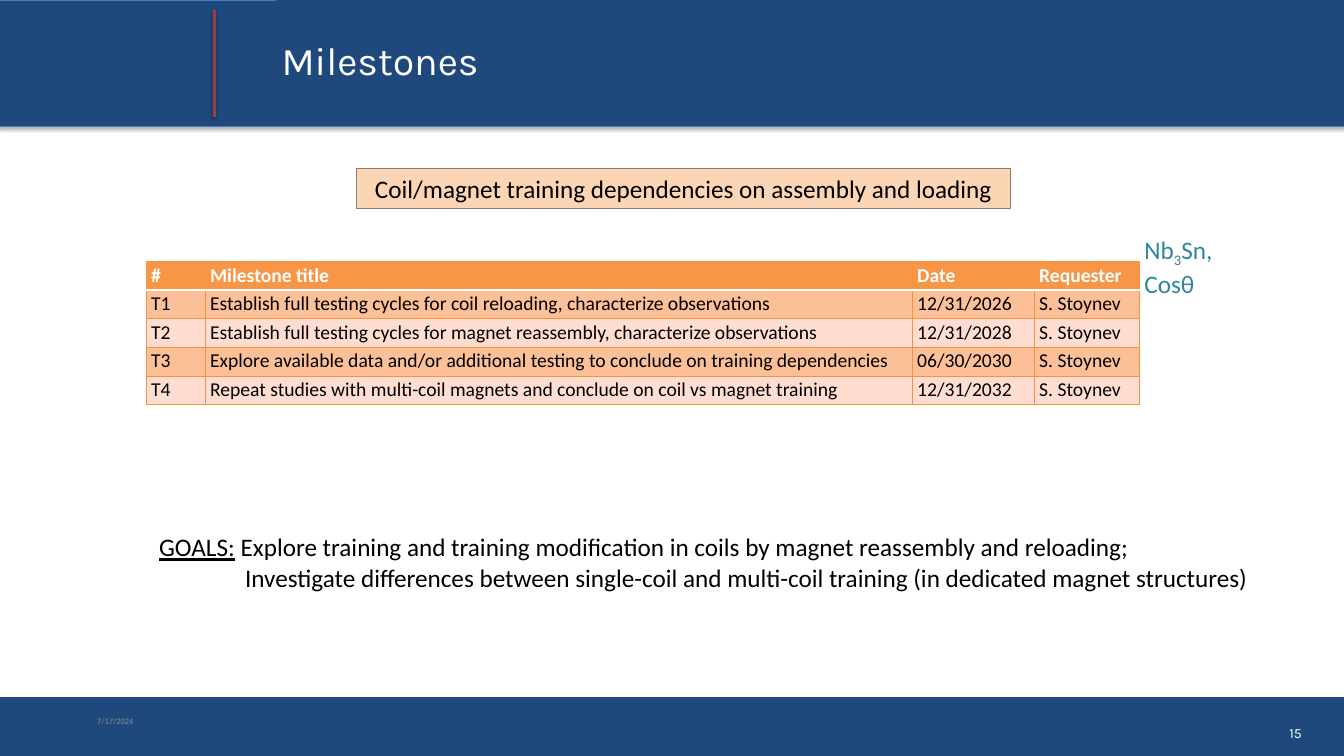
from dataclasses import dataclass

from lxml import etree
from pptx import Presentation
from pptx import util as u
from pptx.dml.color import RGBColor
from pptx.enum import shapes, text
from pptx.oxml import parse_xml
from pptx.oxml.ns import nsdecls, qn


@dataclass(frozen=True)
class Theme:
    navy: str = "1F497D"
    header_edge: str = "4A7EBB"
    divider: str = "9A403E"
    white: str = "FFFFFF"
    black: str = "000000"
    date_gray: str = "8C8C8C"
    topic_fill: str = "FCD5B5"
    topic_edge: str = "808080"
    teal: str = "31859C"
    table_head: str = "F79646"
    table_grid: str = "F69240"
    band_dark: str = "FCC099"
    band_light: str = "FFDDD0"
    heading_font: str = "Karla"
    body_font: str = "Calibri"
    title_size: int = 56
    body_size: int = 36
    table_size: int = 28
    number_size: int = 20
    date_size: int = 12


theme = Theme()


def add_block(box, fill=None, line=None):
    left, top, width, height = [u.Cm(value) for value in box]
    shape = slide.shapes.add_shape(shapes.MSO_SHAPE.RECTANGLE, left, top, width, height)
    shape.shadow.inherit = False
    if fill:
        shape.fill.solid()
        shape.fill.fore_color.rgb = RGBColor.from_string(fill)
    else:
        shape.fill.background()
    if line:
        shape.line.color.rgb = RGBColor.from_string(line)
        shape.line.width = u.Pt(1)
    else:
        shape.line.fill.background()
    frame = shape.text_frame
    frame.word_wrap = True
    frame.vertical_anchor = text.MSO_ANCHOR.TOP
    frame.margin_left = frame.margin_right = u.Cm(0.25)
    frame.margin_top = frame.margin_bottom = u.Cm(0.25)
    frame.paragraphs[0].alignment = text.PP_ALIGN.LEFT
    return shape


def add_run(paragraph, wording, size, color, font=theme.body_font):
    run = paragraph.add_run()
    run.text = wording
    run.font.size = u.Pt(size)
    run.font.name = font
    run.font.color.rgb = RGBColor.from_string(color)
    return run


presentation = Presentation()
presentation.slide_width = u.Cm(67.74)
presentation.slide_height = u.Cm(38.1)
slide = presentation.slides.add_slide(presentation.slide_layouts[6])

add_block((-0.1, 35.13, 67.92, 3.02), theme.navy)
header = add_block((-0.18, 0, 68.05, 6.35), theme.navy, theme.header_edge)
divider = slide.shapes.add_connector(
    shapes.MSO_CONNECTOR.STRAIGHT, u.Cm(10.8), u.Cm(5.92), u.Cm(10.8), u.Cm(0.51))
divider.line.color.rgb = RGBColor.from_string(theme.divider)
divider.line.width = u.Pt(4)
etree.SubElement(divider._element.spPr, qn("a:effectLst"))
for shape, opacity in ((header, 35), (divider, 38)):
    effects = shape._element.spPr.find(qn("a:effectLst"))
    effects.append(parse_xml(
        f'<a:outerShdw {nsdecls("a")} blurRad="{u.Pt(6)}" dist="{u.Pt(3)}" '
        f'dir="5400000" rotWithShape="0"><a:srgbClr val="{theme.black}">'
        f'<a:alpha val="{opacity * 1000}"/></a:srgbClr></a:outerShdw>'))

title = add_block((13.94, -0.08, 53.87, 6.15), theme.navy).text_frame
title.vertical_anchor = text.MSO_ANCHOR.MIDDLE
add_run(title.paragraphs[0], "Milestones", theme.title_size, theme.white, theme.heading_font)

date = add_block((4.65, 35.31, 15.24, 2.03)).text_frame
date.vertical_anchor = text.MSO_ANCHOR.MIDDLE
add_run(date.paragraphs[0], "7/17/2024", theme.date_size, theme.date_gray)

number = add_block((64.52, 36.27, 1.35, 1.3)).text_frame
number.paragraphs[0].alignment = text.PP_ALIGN.RIGHT
add_run(number.paragraphs[0], "15", theme.number_size, theme.white, theme.heading_font)

goals = add_block((7.77, 26.54, 56.75, 3.6)).text_frame
first_goal = goals.paragraphs[0]
add_run(first_goal, "GOALS:", theme.body_size, theme.black).font.underline = True
add_run(first_goal, " Explore training and training modification in coils by magnet "
        "reassembly and reloading;", theme.body_size, theme.black)
second_goal = goals.add_paragraph()
second_goal.alignment = text.PP_ALIGN.LEFT
second_goal._p.get_or_add_pPr().set("marL", str(u.Cm(4.33)))
add_run(second_goal, "Investigate differences between single-coil and multi-coil training "
        "(in dedicated magnet structures)", theme.body_size, theme.black)

milestones = (
    ("#", "Milestone title", "Date", "Requester"),
    ("T1", "Establish full testing cycles for coil reloading, characterize observations",
     "12/31/2026", "S. Stoynev"),
    ("T2", "Establish full testing cycles for magnet reassembly, characterize observations",
     "12/31/2028", "S. Stoynev"),
    ("T3", "Explore available data and/or additional testing to conclude on training dependencies",
     "06/30/2030", "S. Stoynev"),
    ("T4", "Repeat studies with multi-coil magnets and conclude on coil vs magnet training",
     "12/31/2032", "S. Stoynev"),
)
column_widths = (2.97, 35.64, 6.15, 5.31)
row_height = 1.44
table = slide.shapes.add_table(
    len(milestones), len(column_widths), u.Cm(7.37), u.Cm(13.18),
    u.Cm(sum(column_widths)), u.Cm(row_height * len(milestones))).table
for column, width in zip(table.columns, column_widths):
    column.width = u.Cm(width)
for row_index, values in enumerate(milestones):
    table.rows[row_index].height = u.Cm(row_height)
    is_head = row_index == 0
    band = theme.band_dark if row_index % 2 else theme.band_light
    for column_index, value in enumerate(values):
        cell = table.cell(row_index, column_index)
        cell.margin_left = cell.margin_right = u.Cm(0.25)
        cell.margin_top = cell.margin_bottom = u.Cm(0.1)
        borders = dict.fromkeys(("lnL", "lnR", "lnT", "lnB"), (theme.table_grid, 0.75))
        if is_head:
            borders["lnB"] = (theme.white, 2)
        elif row_index == 1:
            borders["lnT"] = (theme.white, 2)
        for side, (color, weight) in borders.items():
            cell._tc.get_or_add_tcPr().append(parse_xml(
                f'<a:{side} {nsdecls("a")} w="{u.Pt(weight)}"><a:solidFill>'
                f'<a:srgbClr val="{color}"/></a:solidFill></a:{side}>'))
        cell.fill.solid()
        cell.fill.fore_color.rgb = RGBColor.from_string(theme.table_head if is_head else band)
        run = add_run(cell.text_frame.paragraphs[0], value, theme.table_size,
                      theme.white if is_head else theme.black)
        run.font.bold = is_head

topic = add_block((17.96, 8.46, 32.97, 2.06), theme.topic_fill, theme.topic_edge).text_frame
topic.paragraphs[0].alignment = text.PP_ALIGN.CENTER
add_run(topic.paragraphs[0], "Coil/magnet training dependencies on assembly and loading",
        theme.body_size, theme.black)

magnet = add_block((57.43, 11.56, 4.04, 3.58)).text_frame
material = magnet.paragraphs[0]
for wording, baseline in (("Nb", None), ("3", "-25000"), ("Sn,", None)):
    run = add_run(material, wording, theme.body_size, theme.teal)
    if baseline:
        run.font._element.set("baseline", baseline)
design = magnet.add_paragraph()
design.alignment = text.PP_ALIGN.LEFT
add_run(design, "Cosθ", theme.body_size, theme.teal)

presentation.save("out.pptx")
